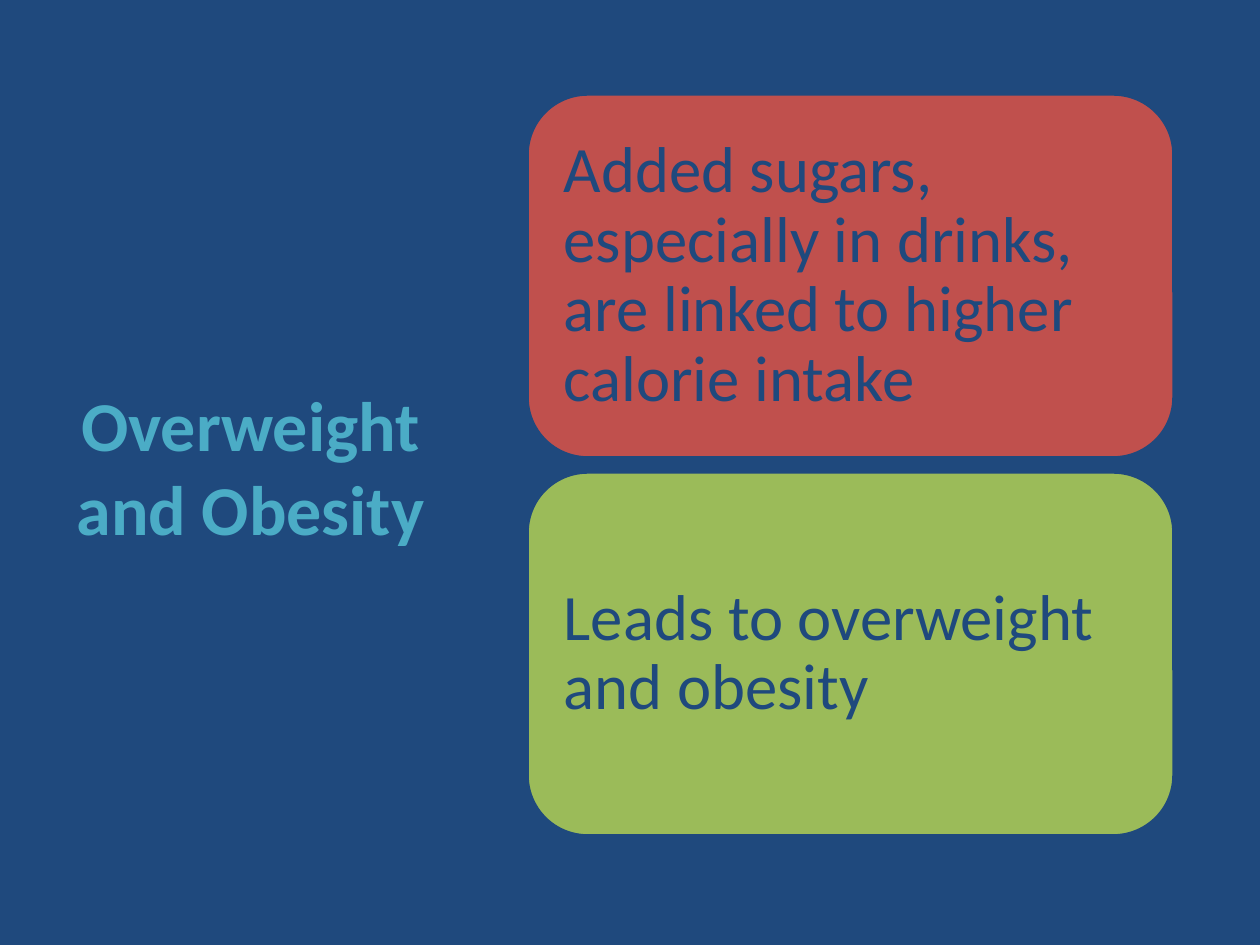
import pptx
import pptx.util
import pptx.dml.color
import pptx.enum.shapes
import pptx.enum.text

EMU_PER_PX = 914400 / 126
FONT = "Calibri"
COLORS = {
    "navy": "1F497D",
    "teal": "4BACC6",
    "red": "C0504D",
    "green": "9BBB59",
}
CARDS = [
    ("Added sugars, especially in drinks, are linked to higher calorie intake", "red"),
    ("Leads to overweight and obesity", "green"),
]


def px(length):
    return pptx.util.Emu(round(length * EMU_PER_PX))


def color(name):
    return pptx.dml.color.RGBColor.from_string(COLORS[name])


def place(shape, box):
    shape.left, shape.top, shape.width, shape.height = map(px, box)


def write(para, text, size, ink, bold=False):
    span = para.add_run()
    span.text = text
    span.font.name = FONT
    span.font.size = pptx.util.Pt(size)
    span.font.bold = bold
    span.font.color.rgb = color(ink)


def add_title(page, box, text):
    title = page.shapes.title
    place(title, box)
    frame = title.text_frame
    frame.word_wrap = True
    frame.auto_size = pptx.enum.text.MSO_AUTO_SIZE.NONE
    frame.vertical_anchor = pptx.enum.text.MSO_ANCHOR.MIDDLE
    para = frame.paragraphs[0]
    para.alignment = pptx.enum.text.PP_ALIGN.CENTER
    write(para, text, 40, "teal", bold=True)


def add_card(page, box, text, fill):
    card = page.shapes.add_shape(
        pptx.enum.shapes.MSO_SHAPE.ROUNDED_RECTANGLE, *map(px, box))
    card.shadow.inherit = False
    card.fill.solid()
    card.fill.fore_color.rgb = color(fill)
    card.line.color.rgb = color("navy")
    card.line.width = pptx.util.Pt(2)

    frame = card.text_frame
    frame.word_wrap = True
    frame.vertical_anchor = pptx.enum.text.MSO_ANCHOR.MIDDLE
    frame.margin_left = frame.margin_right = px(19)
    frame.margin_top = frame.margin_bottom = px(19)
    para = frame.paragraphs[0]
    para.alignment = pptx.enum.text.PP_ALIGN.LEFT
    para.line_spacing = 0.9
    write(para, text, 37, "navy")


def add_card_stack(page, box, cards, gap):
    left, top, width, height = box
    card_height = (height - gap * (len(cards) - 1)) / len(cards)
    for index, (text, fill) in enumerate(cards):
        card_top = top + index * (card_height + gap)
        add_card(page, (left, card_top, width, card_height), text, fill)


def main():
    deck = pptx.Presentation()
    deck.slide_width, deck.slide_height = px(1260), px(945)
    page = deck.slides.add_slide(deck.slide_layouts[5])

    # Background
    page.background.fill.solid()
    page.background.fill.fore_color.rgb = color("navy")

    # Title on the left, stacked cards on the right
    add_title(page, (54, 86, 393, 759), "Overweight and Obesity")
    add_card_stack(page, (527, 94, 647, 742), CARDS, gap=14)

    deck.save("out.pptx")


if __name__ == "__main__":
    main()
